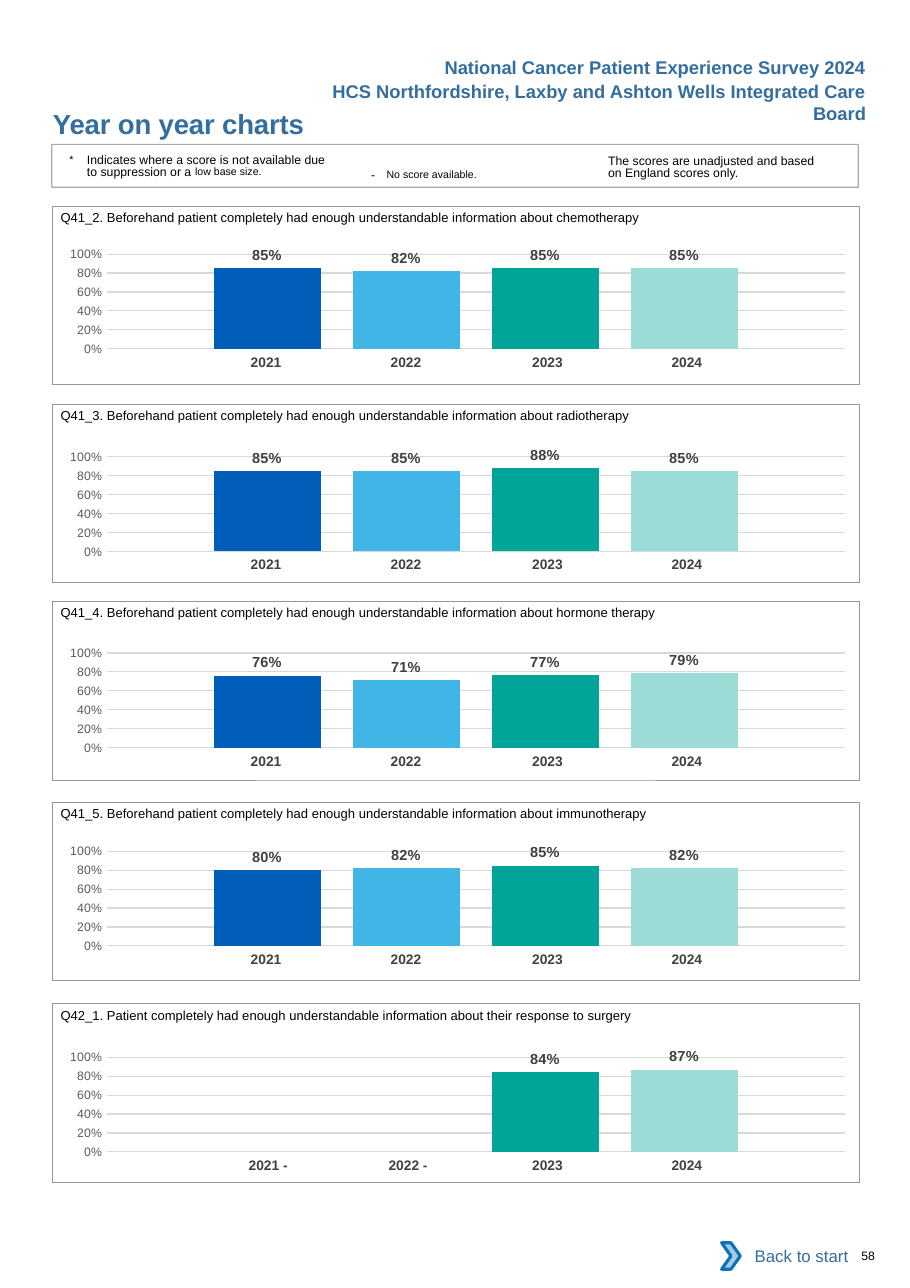
from dataclasses import dataclass

from lxml.etree import SubElement as Sub
from pptx import Presentation
from pptx.chart.data import CategoryChartData as ChartData
from pptx.dml.color import RGBColor as Rgb
from pptx.enum.chart import XL_CHART_TYPE as Kind, XL_LABEL_POSITION as Spot, XL_TICK_MARK as Tick
from pptx.enum.shapes import MSO_SHAPE as Form
from pptx.enum.text import MSO_ANCHOR as Anchor, MSO_AUTO_SIZE as Fit, PP_ALIGN as Align
from pptx.oxml.ns import qn
from pptx.util import Pt


@dataclass(frozen=True)
class Theme:
    face: str = "Arial"
    base: str = "Calibri"
    ink: str = "000000"
    blue: str = "336E9F"
    white: str = "FFFFFF"
    rule: str = "939598"
    grid: str = "D9D9D9"
    tick: str = "595959"
    label: str = "404040"
    year: str = "414042"
    arrow: str = "A8C7E9"
    edge: str = "0A74BB"
    bars: tuple = ("005EB8", "41B6E6", "00A499", "9CDCD7")
    title: float = 18
    head: float = 12
    link: float = 11
    value: float = 9.5
    date: float = 9
    ask: float = 8.5
    note: float = 8
    plain: float = 10


LOOK = Theme()
YEARS = ("2021", "2022", "2023", "2024")
WIDE = 527.04
PLOT = dict(x=0.079, y=0.145, w=0.915, h=0.666)
BARE = "{2D5ABB26-0587-4C30-8999-92F81FD0307C}"
ASK = "Beforehand patient completely had enough understandable information about "
SURGERY = "Patient completely had enough understandable information about their response to surgery"
PANELS = (
    (134.64, 152.64, "Q41_2. " + ASK + "chemotherapy", YEARS, (0.85, 0.82, 0.85, 0.85)),
    (264.24, 285.12, "Q41_3. " + ASK + "radiotherapy", YEARS, (0.85, 0.85, 0.88, 0.85)),
    (393.12, 413.28, "Q41_4. " + ASK + "hormone therapy", YEARS, (0.76, 0.71, 0.77, 0.79)),
    (524.16, 542.88, "Q41_5. " + ASK + "immunotherapy", YEARS, (0.8, 0.82, 0.85, 0.82)),
    (655.92, 677.52, "Q42_1. " + SURGERY,
     ("2021 -", "2022 -", "2023", "2024"), (None, None, 0.84, 0.87)),
)


def apply(thing, **vals):
    for name, val in vals.items():
        setattr(thing, name, val)


def style(font, size, color, bold=False, face=LOOK.face):
    apply(font, size=Pt(size), bold=bold, name=face)
    font.color.rgb = Rgb.from_string(color)


def inset(thing, left, top, right, low):
    apply(thing, margin_left=Pt(left), margin_top=Pt(top),
          margin_right=Pt(right), margin_bottom=Pt(low))


def place(box):
    return [Pt(n) for n in box]


def write(shape, runs, pads=(0, 0, 0, 0), anchor=Anchor.TOP, align=Align.LEFT, lead=None):
    frame = shape.text_frame
    apply(frame, word_wrap=True, auto_size=Fit.NONE, vertical_anchor=anchor)
    inset(frame, *pads)
    para = frame.paragraphs[0]
    apply(para, alignment=align, space_before=Pt(0), line_spacing=lead and Pt(lead))
    for words, size, color, bold, extra in runs:
        run = para.add_run()
        run.text = words
        style(run.font, size, color, bold)
        for key, val in extra.items():
            run.font._element.set(key, val)
    return para


def text(home, box, runs, **form):
    return write(home.add_textbox(*place(box)), runs, **form)


def piece(words, size=LOOK.note, color=LOOK.ink, bold=False, **extra):
    return words, size, color, bold, extra


def shape(home, form, box, fill=None, line=None, width=0.5):
    item = home.add_shape(form, *place(box))
    item.shadow.inherit = False
    for part, color in ((item.fill, fill), (item.line.fill, line)):
        if color:
            part.solid()
            part.fore_color.rgb = Rgb.from_string(color)
        else:
            part.background()
    if line:
        item.line.width = Pt(width)
    return item


def years(home, top, names):
    widths = (91.44, 91.44, 96.48, 91.44)
    rights = (0, 0, 2.88, 8.64)
    table = home.add_table(1, 4, *place((124.56, top, sum(widths), 19.44))).table
    apply(table, first_row=False, horz_banding=False)
    table._tbl.tblPr.find(qn("a:tableStyleId")).text = BARE
    for col, cell, name, wide, right in zip(
            table.columns, table.rows[0].cells, names, widths, rights):
        col.width = Pt(wide)
        cell.fill.background()
        inset(cell, 10 if name.endswith("-") else 7.2, 3.6, right, 3.6)
        cell.text = name
        para = cell.text_frame.paragraphs[0]
        para.alignment = Align.CENTER
        style(para.runs[0].font, LOOK.date, LOOK.year, True)


def layout(chart):
    area = chart._chartSpace.chart.plotArea
    for old in area.findall(qn("c:layout")):
        area.remove(old)
    node = Sub(area, qn("c:layout"))
    area.insert(0, node)
    manual = Sub(node, qn("c:manualLayout"))
    marks = dict(layoutTarget="inner", xMode="edge", yMode="edge", **PLOT)
    for key, val in marks.items():
        Sub(manual, qn("c:" + key)).set("val", str(val))
    paint = Sub(chart._chartSpace, qn("c:spPr"))
    Sub(paint, qn("a:noFill"))
    Sub(Sub(paint, qn("a:ln")), qn("a:noFill"))
    chart._chartSpace.chart.addnext(paint)


def scale(axis):
    apply(axis, minimum_scale=0, maximum_scale=1, major_unit=0.2,
          major_tick_mark=Tick.NONE, minor_tick_mark=Tick.NONE,
          has_major_gridlines=True)
    axis.format.line.fill.background()
    line = axis.major_gridlines.format.line
    line.width = Pt(0.75)
    line.color.rgb = Rgb.from_string(LOOK.grid)
    marks = axis.tick_labels
    apply(marks, number_format="0%", number_format_is_linked=False)
    style(marks.font, LOOK.note, LOOK.tick)


def bars(home, top, vals):
    data = ChartData(number_format="0%")
    data.categories = ["1"]
    for num, val in enumerate(vals, 1):
        data.add_series(f"Series {num}", [val])
    box = place((28.08, top, WIDE, 92.88))
    chart = home.add_chart(Kind.COLUMN_CLUSTERED, *box, data).chart
    apply(chart, has_legend=False, has_title=False)
    style(chart.font, LOOK.plain, LOOK.ink, face=LOOK.base)
    chart.category_axis.visible = False
    scale(chart.value_axis)
    plot = chart.plots[0]
    apply(plot, gap_width=200, overlap=-30, vary_by_categories=False)
    for series, color in zip(plot.series, LOOK.bars):
        series.format.fill.solid()
        series.format.fill.fore_color.rgb = Rgb.from_string(color)
        tags = series.data_labels
        apply(tags, show_value=True, position=Spot.OUTSIDE_END,
              number_format="0%", number_format_is_linked=False)
        style(tags.font, LOOK.value, LOOK.label, True)
    layout(chart)


def panel(home, top, plot, ask, names, vals):
    years(home, plot + 75.6, names)
    bars(home, plot, vals)
    shape(home, Form.RECTANGLE, (34.4, top, WIDE, 116.64), line=LOOK.rule)
    text(home, (39.6, top - 4.9, 519, 17.28), [piece(ask, LOOK.ask)],
         pads=(0, 7, 0, 0), anchor=Anchor.MIDDLE)


def legend(home):
    text(home, (397.44, 99.36, 144.72, 19.44),
         [piece("The scores are unadjusted and based on England scores only.")],
         pads=(0, 2.2, 0, 0), lead=8.1)
    text(home, (235.44, 101.5, 131.76, 17.28),
         [piece("- ", spc="260"), piece("No score available.", LOOK.head, baseline="3000")],
         pads=(7.2, 3.6, 7.2, 3.6))
    para = text(home, (45.36, 99.36, 172, 19.44),
                [piece("*\t", LOOK.head, baseline="3000"),
                 piece("Indicates where a score is not available due to suppression or a "),
                 piece("low base size.", LOOK.head, baseline="7000")],
                pads=(0, 2.2, 0, 0), lead=8.1)
    hang = Pt(11.5)
    for key, val in dict(marL=hang, indent=-hang).items():
        para._p.get_or_add_pPr().set(key, str(val))
    frame = shape(home, Form.RECTANGLE, (33.84, 94.32, WIDE, 28.08), line=LOOK.rule, width=0.75)
    tint = frame.line._ln.find(".//" + qn("a:srgbClr"))
    Sub(tint, qn("a:alpha")).set("val", "80000")


def link(home):
    back = shape(home, Form.RECTANGLE, (476.64, 805.68, 84.96, 30.24), fill=LOOK.white)
    write(back, [piece("Back to start", LOOK.link, LOOK.blue)],
          pads=(7.2, 3.6, 7.2, 3.6), anchor=Anchor.MIDDLE, align=Align.RIGHT)
    shape(home, Form.CHEVRON, (471.6, 812.16, 12.24, 17.28), LOOK.arrow, LOOK.edge, 2)


def main():
    deck = Presentation()
    apply(deck, slide_width=Pt(594.72), slide_height=Pt(841.68))
    slide = deck.slides.add_slide(deck.slide_layouts[5])
    home = slide.shapes
    title = home.title
    apply(title, left=Pt(33.84), top=Pt(69.12), width=Pt(324), height=Pt(21.6))
    write(title, [piece("Year on year charts", LOOK.title, LOOK.blue, True, spc="-10")],
          pads=(0.7, 0.5, 0, 0))
    heads = ("National Cancer Patient Experience Survey 2024",
             "HCS Northfordshire, Laxby and Ashton Wells Integrated Care Board")
    for row, words in enumerate(heads):
        text(home, (172.8, 33.12 + 15.84 * row, 400.32, 21.6),
             [piece(words, LOOK.head, LOOK.blue, True)],
             pads=(7.2, 3.6, 7.2, 3.6), align=Align.RIGHT)
    for row in PANELS:
        panel(home, *row)
    legend(home.add_group_shape().shapes)
    link(home.add_group_shape().shapes)
    text(home, (555.84, 815.76, 36.72, 9.36), [piece("58")], pads=(7.2, 0, 0, 0))
    deck.save("out.pptx")


if __name__ == "__main__":
    main()
